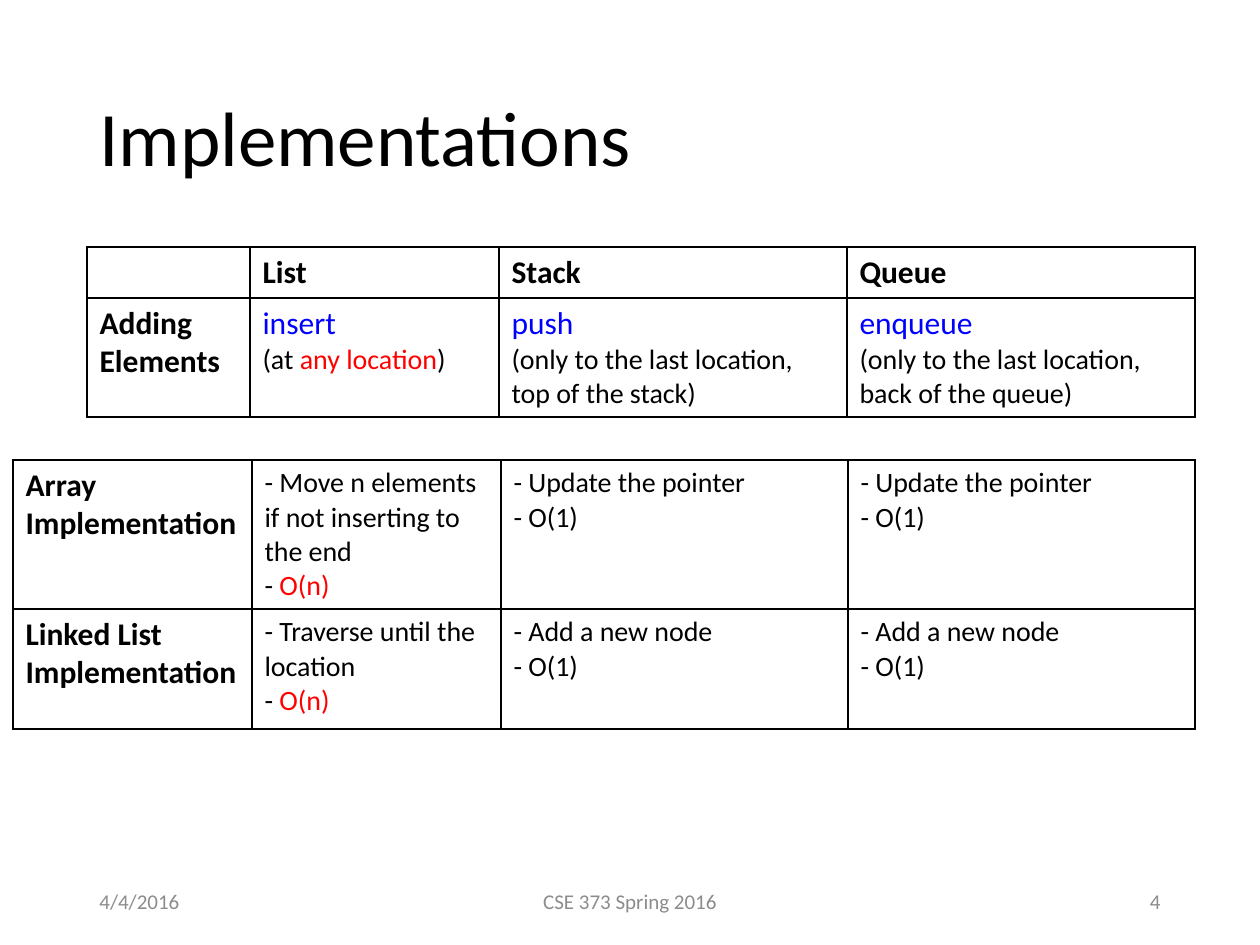
from lxml import etree
from pptx import Presentation
from pptx.dml.color import RGBColor
from pptx.enum.text import MSO_ANCHOR, PP_ALIGN
from pptx.oxml.ns import qn
from pptx.util import Pt

PX = 914400 / 126
FONT = "Calibri"
MIDDLE = MSO_ANCHOR.MIDDLE
LEFT, CENTER, RIGHT = PP_ALIGN.LEFT, PP_ALIGN.CENTER, PP_ALIGN.RIGHT
HEX = {"black": "000000", "blue": "0000FF", "red": "FF0000", "gray": "8C8C8C"}
LOOKS = {
    "title": ({"size": Pt(44), "bold": False}, "black"),
    "head": ({"size": Pt(18), "bold": True}, "black"),
    "call": ({"size": Pt(18), "bold": False}, "blue"),
    "body": ({"size": Pt(16), "bold": False}, "black"),
    "alert": ({"size": Pt(16), "bold": False}, "red"),
    "foot": ({"size": Pt(12), "bold": False}, "gray"),
}


def px(count):
    return round(count * PX)


def head(*lines):
    return [[(line, "head")] for line in lines]


def body(*lines):
    return [[(line, "body")] for line in lines]


def call(name, *lines):
    return [[(name, "call")]] + body(*lines)


def slow(step):
    return body(step) + [[("- ", "body"), ("O(n)", "alert")]]


def fast(step):
    return body(step, "- O(1)")


ADDING = [
    [[], head("List"), head("Stack"), head("Queue")],
    [
        head("Adding Elements"),
        call("insert")
        + [[("(at ", "body"), ("any location", "alert"), (")", "body")]],
        call("push", "(only to the last location,", "top of the stack)"),
        call("enqueue", "(only to the last location,", "back of the queue)"),
    ],
]
COSTS = [
    [head("Array Implementation"),
     slow("- Move n elements if not inserting to the end")]
    + [fast("- Update the pointer")] * 2,
    [head("Linked List", "Implementation"),
     slow("- Traverse until the location")]
    + [fast("- Add a new node")] * 2,
]


def write(frame, paras, align=LEFT, space=1.0):
    for i, runs in enumerate(paras):
        para = frame.add_paragraph() if i else frame.paragraphs[0]
        para.alignment = align
        para.line_spacing = space
        for text, look in runs:
            run = para.add_run()
            run.text = text
            form, color = LOOKS[look]
            for key, value in {"name": FONT, **form}.items():
                setattr(run.font, key, value)
            run.font.color.rgb = RGBColor.from_string(HEX[color])


def add_text(slide, box, text, look, align=LEFT, space=1.0):
    frame = slide.shapes.add_textbox(*map(px, box)).text_frame
    frame.word_wrap = True
    frame.vertical_anchor = MIDDLE
    write(frame, [[(text, look)]], align, space)


def add_edges(cell):
    props = cell._tc.get_or_add_tcPr()
    for i, side in enumerate(("lnL", "lnR", "lnT", "lnB")):
        line = etree.Element(qn(f"a:{side}"), w=str(Pt(1)))
        fill = etree.SubElement(line, qn("a:solidFill"))
        etree.SubElement(fill, qn("a:srgbClr"), val=HEX["black"])
        props.insert(i, line)


def add_grid(slide, left, top, wides, highs, rows):
    box = left, top, sum(wides), sum(highs)
    table = slide.shapes.add_table(len(highs), len(wides), *map(px, box)).table
    table.first_row = table.horz_banding = False
    for col, wide in zip(table.columns, wides):
        col.width = px(wide)
    for row, high, cells in zip(table.rows, highs, rows):
        row.height = px(high)
        for cell, paras in zip(row.cells, cells):
            cell.fill.background()
            add_edges(cell)
            write(cell.text_frame, paras)


def add_foot(slide, left, top, width, height):
    side, mid = 284, 426
    parts = [
        (0, side, "4/4/2016", LEFT),
        ((width - mid) // 2, mid, "CSE 373 Spring 2016", CENTER),
        (width - side, side, "4", RIGHT),
    ]
    for shift, wide, text, align in parts:
        add_text(slide, (left + shift, top, wide, height), text, "foot", align)


def main():
    deck = Presentation()
    deck.slide_width, deck.slide_height = px(1260), px(945)
    slide = deck.slides.add_slide(deck.slide_layouts[6])
    add_text(slide, (87, 50, 1086, 183), "Implementations", "title", space=0.9)
    add_grid(slide, 87, 247, (163, 249, 348, 348), (51, 119), ADDING)
    add_grid(slide, 13, 460, (239, 249, 347, 347), (149, 120), COSTS)
    add_foot(slide, 87, 876, 1086, 50)
    deck.save("out.pptx")


if __name__ == "__main__":
    main()
